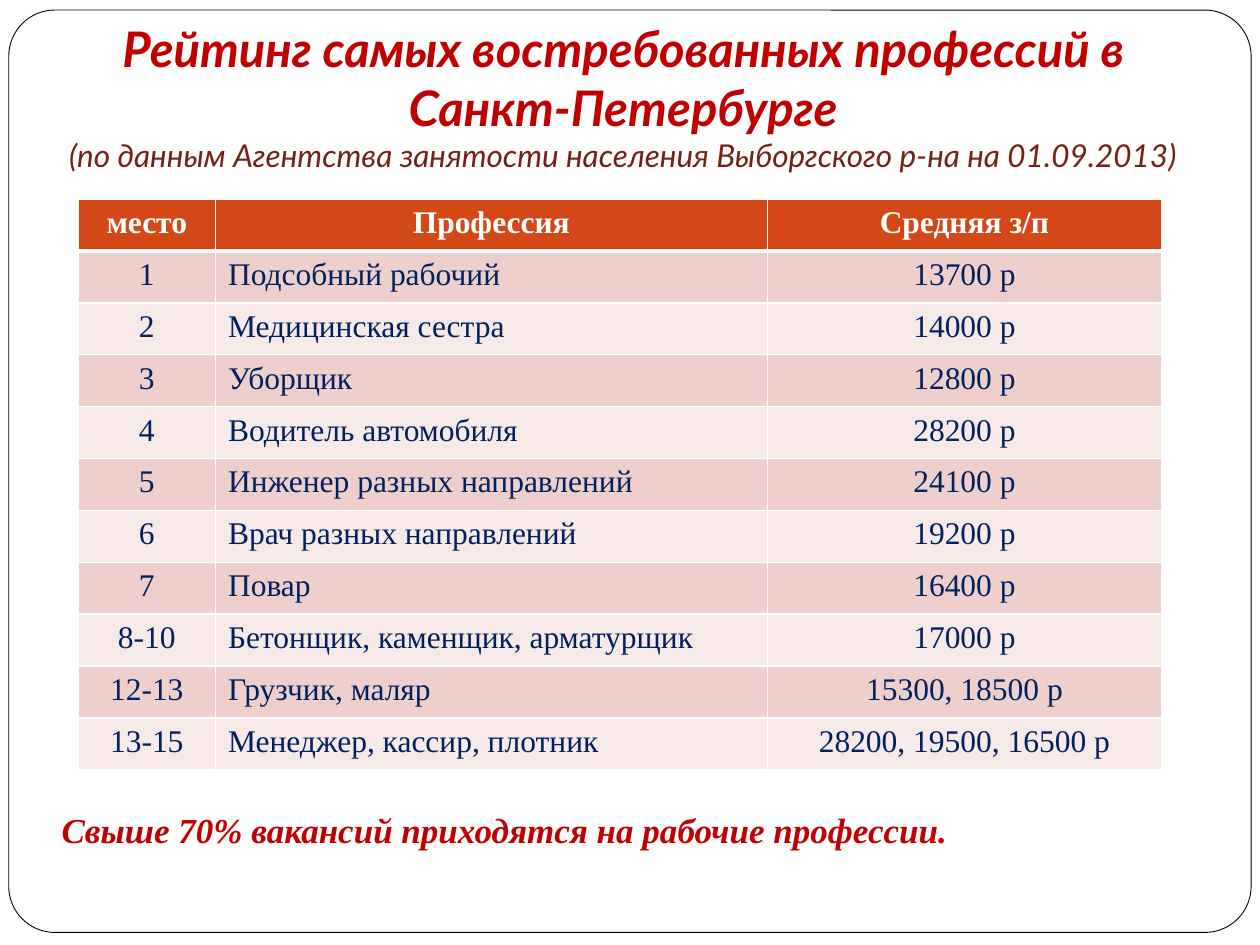
"""Builds a slide ranking the most sought-after professions in Saint Petersburg."""
from lxml import etree
from pptx import Presentation
from pptx.dml.color import RGBColor
from pptx.enum.shapes import MSO_SHAPE
from pptx.enum.text import MSO_ANCHOR, PP_ALIGN
from pptx.oxml.ns import qn
from pptx.util import Inches, Pt

ROUNDED = MSO_SHAPE.ROUNDED_RECTANGLE
BOTTOM = MSO_ANCHOR.BOTTOM
LEFT, CENTER = PP_ALIGN.LEFT, PP_ALIGN.CENTER
SERIF = "Times New Roman"


def paint(target, color):
    if hasattr(target, "solid"):
        target.solid()
        target = target.fore_color
    target.rgb = RGBColor.from_string(color)


def add_text(paragraph, text, color, **font_format):
    run = paragraph.add_run()
    run.text = text
    for name, value in font_format.items():
        setattr(run.font, name, value)
    paint(run.font.color, color)


prs = Presentation()
prs.slide_width, prs.slide_height = Inches(10), Inches(7.5)
slide = prs.slides.add_slide(prs.slide_layouts[6])

frame = slide.shapes.add_shape(
    ROUNDED, Inches(0.07), Inches(0.08), Inches(9.86), Inches(7.32))
frame.adjustments[0] = 0.05
frame.shadow.inherit = False
paint(frame.fill, "FFFFFF")
paint(frame.line.fill, "000000")
frame.line.width = Pt(0.5)

heading = slide.shapes.add_textbox(
    Inches(0.39), Inches(0.3), Inches(9.11), Inches(1.18)).text_frame
heading_format = {"word_wrap": True, "vertical_anchor": BOTTOM,
                  "margin_bottom": Inches(0.1)}
for name, value in heading_format.items():
    setattr(heading, name, value)
title = heading.paragraphs[0]
title.alignment = CENTER
add_text(title, "Рейтинг самых востребованных профессий в Санкт-Петербурге",
         "C00000", name="Lato", size=Pt(28), bold=True, italic=True)
title.add_line_break()
add_text(title, "(по данным Агентства занятости населения Выборгского р-на на 01.09.2013)",
         "742217", name="Lato", size=Pt(18), bold=False, italic=True)

conclusion = slide.shapes.add_textbox(
    Inches(0.39), Inches(6.37), Inches(9.11), Inches(0.45)).text_frame
conclusion.word_wrap = True
add_text(conclusion.paragraphs[0], "Свыше 70% вакансий приходятся на рабочие профессии.",
         "C00000", name=SERIF, size=Pt(20), bold=True, italic=True)

ranking = [
    ("место", "Профессия", "Средняя з/п"),
    ("1", "Подсобный рабочий", "13700 р"),
    ("2", "Медицинская сестра", "14000 р"),
    ("3", "Уборщик", "12800 р"),
    ("4", "Водитель автомобиля", "28200 р"),
    ("5", "Инженер разных направлений", "24100 р"),
    ("6", "Врач разных направлений", "19200 р"),
    ("7", "Повар", "16400 р"),
    ("8-10", "Бетонщик, каменщик, арматурщик", "17000 р"),
    ("12-13", "Грузчик, маляр", "15300, 18500 р"),
    ("13-15", "Менеджер, кассир, плотник", "28200, 19500, 16500 р"),
]
table = slide.shapes.add_table(
    len(ranking), 3, Inches(0.62), Inches(1.58), Inches(8.6), Inches(4.53)).table
for column, width in zip(table.columns, (1.09, 4.38, 3.13)):
    column.width = Inches(width)

for row, entry in enumerate(ranking):
    is_header = row == 0
    row_fill = "D34817" if is_header else ("F7E9E8", "EFCFCC")[row % 2]
    for col, text in enumerate(entry):
        cell = table.cell(row, col)
        paragraph = cell.text_frame.paragraphs[0]
        paragraph.alignment = LEFT if col == 1 and not is_header else CENTER
        add_text(paragraph, text, "FFFFFF" if is_header else "002060",
                 name=SERIF, size=Pt(18), bold=is_header)
        properties = cell._tc.get_or_add_tcPr()
        for side in ("lnL", "lnR", "lnT", "lnB"):
            thick = (row, side) in ((0, "lnB"), (1, "lnT"))
            border = etree.SubElement(properties, qn(f"a:{side}"), w=str(Pt(3 if thick else 1)))
            border_fill = etree.SubElement(border, qn("a:solidFill"))
            etree.SubElement(border_fill, qn("a:srgbClr"), val="FFFFFF")
        paint(cell.fill, row_fill)

prs.save("out.pptx")
